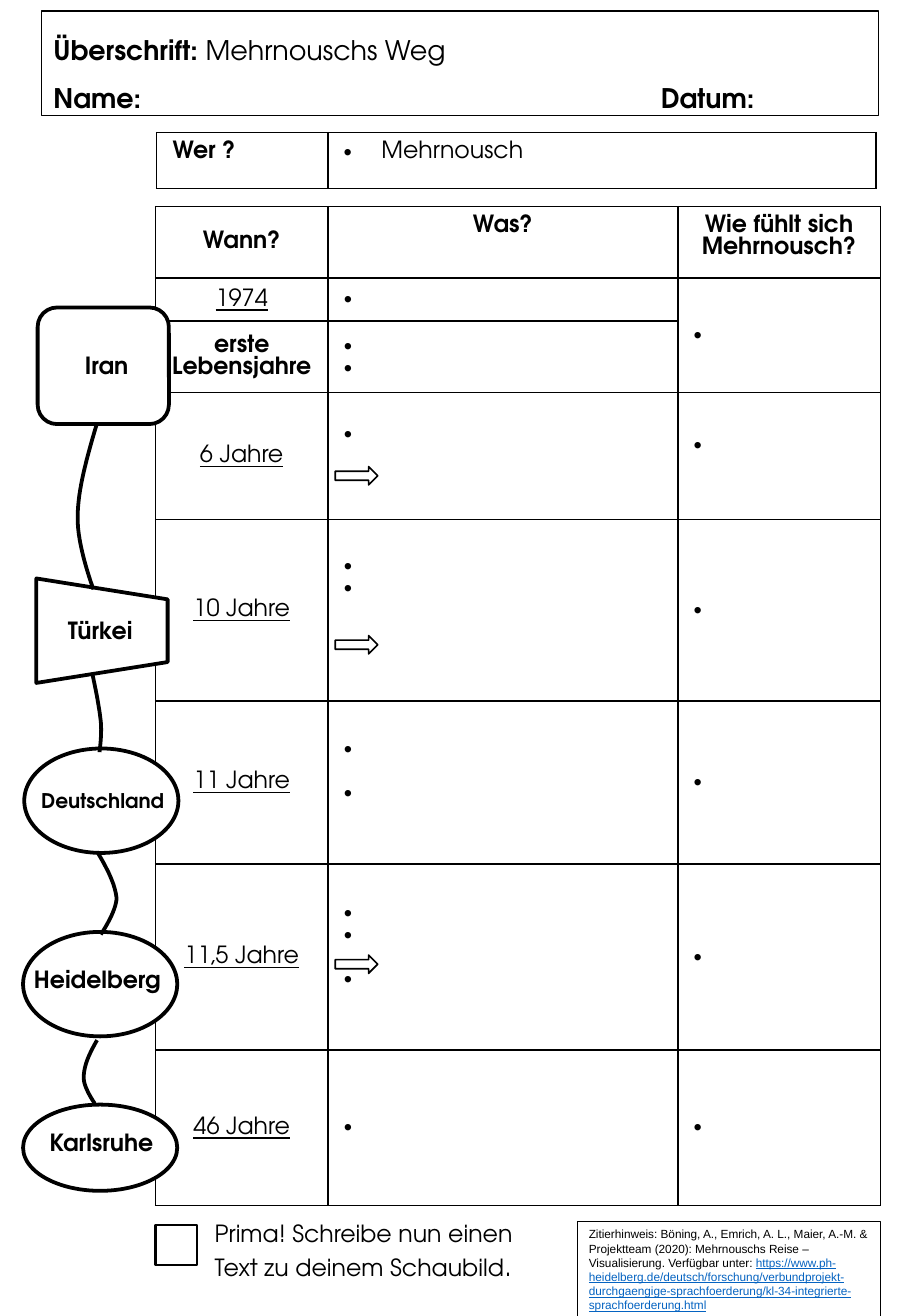
from lxml import etree
from pptx import Presentation
from pptx.dml.color import RGBColor
from pptx.enum import dml, shapes, text
from pptx.oxml import ns
from pptx.util import Pt

BLACK = RGBColor(0, 0, 0)
WHITE = RGBColor(255, 255, 255)
LINK_BLUE = RGBColor(0x05, 0x63, 0xC1)
ADVENTOR = "TeX Gyre Adventor"
LINE = 13
BULLET_INDENT = 22.3
KIND = shapes.MSO_SHAPE

AGES = ["1974", "erste Lebensjahre", "6 Jahre", "10 Jahre", "11 Jahre",
        "11,5 Jahre", "46 Jahre"]
EVENT_GAPS = [[0], [0, 0], [0], [0, 0], [0, 1], [0, 0, 1], [0]]
EVENT_LINES_BELOW = [0, 0, 2, 3, 1, 1, 0]
FEELING_LINES_BELOW = {1: 0, 3: 1, 4: 0, 5: 0, 6: 0, 7: 0}

STATIONS = [
    (KIND.ROUNDED_RECTANGLE, (22.3, 182.2, 77.8, 69.1), 0,
     "Iran", (43.2, 204.5, 43.2, 24.5), 14),
    (KIND.FLOWCHART_MANUAL_OPERATION, (29.5, 334.8, 61.9, 77.8), 270,
     "Türkei", (33.1, 361.4, 56.2, 24.5), 14),
    (KIND.OVAL, (14.4, 443.5, 91.4, 61.9), 0,
     "Deutschland", (17.3, 463.7, 90, 21.6), 12),
    (KIND.OVAL, (13.7, 552.2, 91.4, 61.9), 0,
     "Heidelberg", (13, 568.1, 91.4, 24.5), 14),
    (KIND.OVAL, (13.7, 654.5, 91.4, 51.1), 0,
     "Karlsruhe", (22.3, 664.6, 77.8, 24.5), 14),
]
ROUTES = [
    [(57.6, 250.6), (51.8, 270), (46.1, 290.2), (46.1, 306),
     (45.4, 322.6), (55.4, 349.2), (55.4, 349.2)],
    [(54.7, 398.9), (56.9, 409), (59, 419.8), (59.8, 427.7),
     (60.5, 435.6), (59, 445.7), (59, 445.7)],
    [(57.6, 504.7), (63.4, 514.1), (68.4, 524.2), (69.1, 532.1),
     (69.1, 540), (59.8, 553.7), (59.8, 553.7)],
    [(57.6, 616.3), (53.3, 623.5), (49.7, 631.4), (49.7, 637.9),
     (49, 643.7), (56.2, 653.8), (56.2, 653.8)],
]


def points(values):
    return [Pt(value) for value in values]


def format_run(run, size, bold=False, underline=False, font=ADVENTOR, color=BLACK):
    run.font.size = Pt(size)
    run.font.bold = bold
    run.font.underline = underline
    run.font.name = font
    run.font.color.rgb = color


def add_part(paragraph, wording, size, **style):
    run = paragraph.add_run()
    run.text = wording
    format_run(run, size, **style)


def add_outline(slide, kind, frame, width, fill=None, rotation=0):
    outline = slide.shapes.add_shape(kind, *points(frame))
    outline.shadow.inherit = False
    outline.rotation = rotation
    outline.line.color.rgb = BLACK
    outline.line.width = Pt(width)
    if fill is None:
        outline.fill.background()
    else:
        outline.fill.solid()
        outline.fill.fore_color.rgb = fill
    return outline


def add_label(slide, frame, wording, size, bold=True):
    label = slide.shapes.add_textbox(*points(frame)).text_frame
    label.word_wrap = True
    label.text = wording
    format_run(label.paragraphs[0].runs[0], size, bold)
    return label.paragraphs[0]


def add_route(slide, curve):
    steps = 16
    track = []
    for first in (0, 3):
        a, b, c, d = curve[first:first + 4]
        for step in range(1, steps + 1):
            t = step / steps
            s = 1 - t
            track.append([Pt(s**3 * a[i] + 3 * s * s * t * b[i]
                             + 3 * s * t * t * c[i] + t**3 * d[i]) for i in (0, 1)])
    builder = slide.shapes.build_freeform(*points(curve[0]), scale=1.0)
    builder.add_line_segments(track, close=False)
    route = builder.convert_to_shape()
    route.shadow.inherit = False
    route.fill.background()
    route.line.color.rgb = BLACK
    route.line.width = Pt(2.25)


def add_grid(slide, left, top, columns, rows):
    grid = slide.shapes.add_table(len(rows), len(columns), *points(
        (left, top, sum(columns), sum(rows)))).table
    grid.first_row = grid.horz_banding = False
    for column, width in zip(grid.columns, columns):
        column.width = Pt(width)
    for row, height in zip(grid.rows, rows):
        row.height = Pt(height)
    for cell in grid.iter_cells():
        cell.margin_left = cell.margin_right = Pt(9.4)
        cell.margin_top = cell.margin_bottom = Pt(5)
        borders = cell._tc.get_or_add_tcPr()
        for side in ("a:lnL", "a:lnR", "a:lnT", "a:lnB"):
            edge = etree.SubElement(borders, ns.qn(side), w=str(Pt(1)))
            solid = etree.SubElement(edge, ns.qn("a:solidFill"))
            etree.SubElement(solid, ns.qn("a:srgbClr"), val=str(BLACK))
        cell.fill.background()
    return grid


def fill_cell(cell, wording, bold=True, underline=False, middle=True, centred=True):
    cell.text = wording
    cell.vertical_anchor = text.MSO_ANCHOR.MIDDLE if middle else text.MSO_ANCHOR.TOP
    paragraph = cell.text_frame.paragraphs[0]
    paragraph.alignment = text.PP_ALIGN.CENTER if centred else text.PP_ALIGN.LEFT
    paragraph.line_spacing = Pt(LINE)
    format_run(paragraph.runs[0], 14, bold, underline)


def add_bullet(paragraph, wording):
    properties = paragraph._p.get_or_add_pPr()
    properties.set("marL", str(Pt(BULLET_INDENT)))
    properties.set("indent", str(Pt(-BULLET_INDENT)))
    etree.SubElement(properties, ns.qn("a:buFont"), typeface="Arial")
    etree.SubElement(properties, ns.qn("a:buChar"), char="•")
    paragraph.line_spacing = Pt(LINE)
    add_part(paragraph, wording, 14)


def add_answer_bullets(cell, gaps, lines_below):
    cell.vertical_anchor = text.MSO_ANCHOR.MIDDLE
    cell.margin_bottom = Pt(5 + LINE * lines_below)
    for index, gap in enumerate(gaps):
        frame = cell.text_frame
        paragraph = frame.add_paragraph() if index else frame.paragraphs[0]
        if gap:
            paragraph.space_before = Pt(LINE * gap)
        add_bullet(paragraph, " ")


def add_heading(slide):
    heading = slide.shapes.title
    heading.left, heading.top, heading.width, heading.height = points(
        (24.5, 6.5, 496.1, 61.9))
    heading.line.color.rgb = BLACK
    heading.line.width = Pt(0.75)
    frame = heading.text_frame
    frame.auto_size = text.MSO_AUTO_SIZE.NONE
    frame.vertical_anchor = text.MSO_ANCHOR.TOP
    topic, name = frame.paragraphs[0], frame.add_paragraph()
    tabs = etree.SubElement(name._p.get_or_add_pPr(), ns.qn("a:tabLst"))
    etree.SubElement(tabs, ns.qn("a:tab"), pos=str(Pt(360)), algn="l")
    for paragraph in (topic, name):
        paragraph.alignment = text.PP_ALIGN.LEFT
        paragraph.line_spacing = 1.5
    add_part(topic, "Überschrift: ", 16, bold=True)
    add_part(topic, "Mehrnouschs Weg", 16)
    add_part(name, "Name:\tDatum:", 16, bold=True)


def add_life_table(slide):
    life = add_grid(slide, 92.2, 122.4, [102.2, 207.4, 120.2],
                    [42.3, 25.6, 42.3, 75.4, 107.3, 96.6, 110.4, 92])
    life.cell(1, 2).merge(life.cell(2, 2))
    for column, question in enumerate(["Wann?", "Was?", "Wie fühlt sich Mehrnousch?"]):
        fill_cell(life.cell(0, column), question, middle=column == 0)
    for row, age in enumerate(AGES, 1):
        stage = age == "erste Lebensjahre"
        fill_cell(life.cell(row, 0), age, bold=stage, underline=not stage)
        add_answer_bullets(life.cell(row, 1), EVENT_GAPS[row - 1],
                           EVENT_LINES_BELOW[row - 1])
    for row, lines_below in FEELING_LINES_BELOW.items():
        add_answer_bullets(life.cell(row, 2), [0], lines_below)


def add_citation(slide):
    citation = add_outline(slide, KIND.RECTANGLE, (342, 723.6, 180, 67), 0.25)
    citation.line.dash_style = dml.MSO_LINE.ROUND_DOT
    frame = citation.text_frame
    frame.word_wrap = True
    frame.vertical_anchor = text.MSO_ANCHOR.TOP
    reference = frame.paragraphs[0]
    reference.alignment = text.PP_ALIGN.LEFT
    add_part(reference, "Zitierhinweis: Böning, A., Emrich, A. L., Maier, A.-M. & "
             "Projektteam (2020): Mehrnouschs Reise – Visualisierung. "
             "Verfügbar unter: ", 7, font="Arial")
    add_part(reference, "https://www.ph-heidelberg.de/deutsch/forschung/"
             "verbundprojekt-durchgaengige-sprachfoerderung/"
             "kl-34-integrierte-sprachfoerderung.html", 7,
             underline=True, font="Arial", color=LINK_BLUE)


def main():
    deck = Presentation()
    deck.slide_width, deck.slide_height = Pt(540), Pt(779.76)
    slide = deck.slides.add_slide(deck.slide_layouts[5])
    add_heading(slide)
    add_life_table(slide)
    person = add_grid(slide, 92.9, 78.5, [101.5, 325], [33.1])
    fill_cell(person.cell(0, 0), "Wer ?", middle=False, centred=False)
    add_bullet(person.cell(0, 1).text_frame.paragraphs[0], "Mehrnousch")
    for kind, frame, rotation, place, label_frame, size in STATIONS:
        add_outline(slide, kind, frame, 2.25, WHITE, rotation)
        add_label(slide, label_frame, place, size)
    for curve in ROUTES:
        add_route(slide, curve)
    for top in (276.5, 376.6, 565.9):
        add_outline(slide, KIND.RIGHT_ARROW, (198.7, top, 25.2, 10.8), 1)
    add_outline(slide, KIND.RECTANGLE, (92.2, 725.8, 24.5, 23.8), 1.5)
    task = add_label(slide, (120.2, 715, 211.7, 46),
                     "Prima! Schreibe nun einen Text zu deinem Schaubild", 14, False)
    task.line_spacing = Pt(20.5)
    add_part(task, ".", 16)
    add_citation(slide)
    deck.save("out.pptx")


if __name__ == "__main__":
    main()
